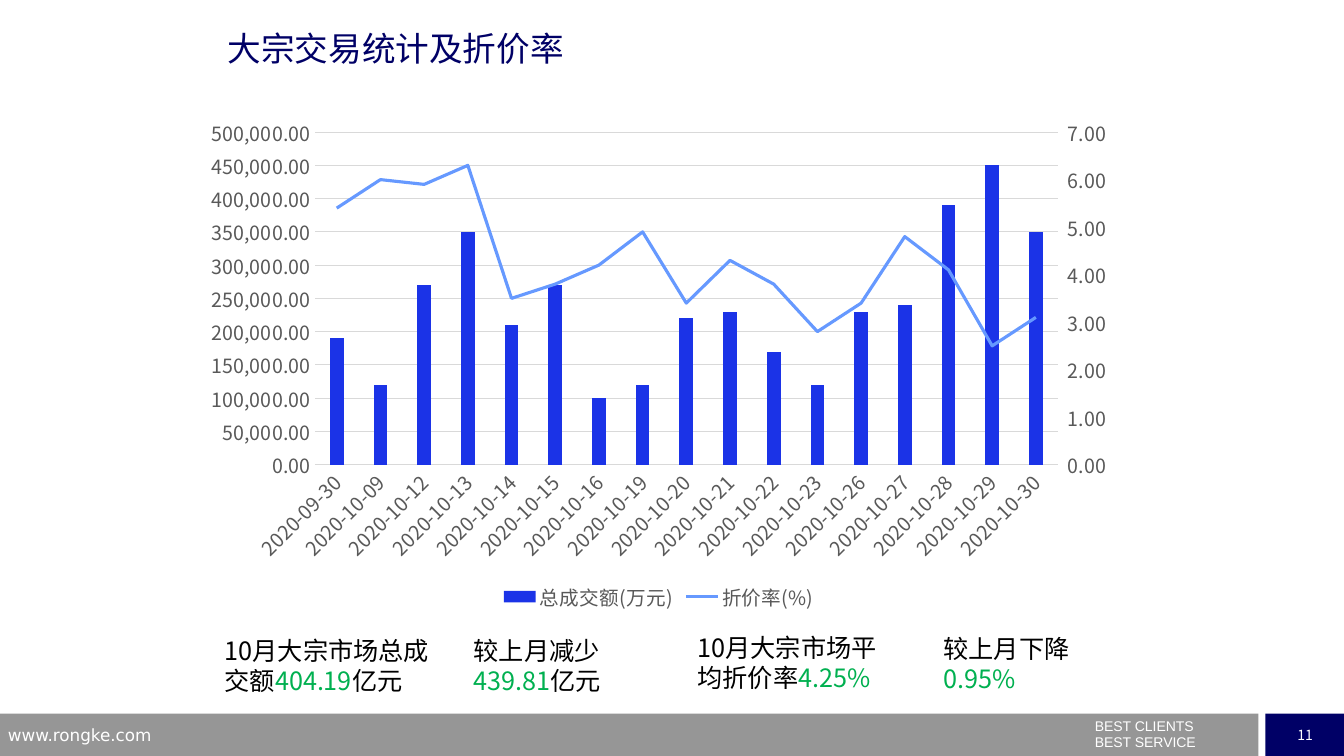
import copy

import pptx
import pptx.chart.axis
import pptx.chart.data
import pptx.dml.color
import pptx.enum.chart
import pptx.enum.shapes
import pptx.enum.text
import pptx.oxml
import pptx.oxml.ns
import pptx.util
from pptx.util import Inches, Pt

CJK = "Noto Sans CJK SC"
NAVY, WHITE, BLACK, GREEN = "000066", "FFFFFF", "000000", "00B050"
GREY_TEXT, GRID = "595959", "D9D9D9"
qn = pptx.oxml.ns.qn


def paint(target, color, size=None, face=CJK):
    """Colour a fill, a line or a font; a font also takes size and face."""
    rgb = pptx.dml.color.RGBColor.from_string(color)
    if size is None:
        if hasattr(target, "solid"):
            target.solid()
            target.fore_color.rgb = rgb
        else:
            target.color.rgb = rgb
    else:
        target.size, target.name = Pt(size), face
        target.color.rgb = rgb


def write(frame, paragraphs, size, face=CJK):
    """Fill a text frame with paragraphs given as lists of (text, colour) runs."""
    frame.word_wrap = True
    for index, runs in enumerate(paragraphs):
        paragraph = frame.add_paragraph() if index else frame.paragraphs[0]
        for text, color in runs:
            run = paragraph.add_run()
            run.text = text
            paint(run.font, color, size, face)


deck = pptx.Presentation()
deck.slide_width, deck.slide_height = Inches(13.33), Inches(7.5)
slide = deck.slides.add_slide(deck.slide_layouts[6])
shapes = slide.shapes

# Footer
bars = []
for left, width, color in [(0, 12.48, "969696"), (12.55, 0.79, NAVY)]:
    bar = shapes.add_shape(pptx.enum.shapes.MSO_SHAPE.RECTANGLE,
                           Inches(left), Inches(7.08), Inches(width), Inches(0.42))
    bar.shadow.inherit = False
    paint(bar.fill, color)
    bar.line.fill.background()
    bars.append(bar)
page_number = bars[1].text_frame
write(page_number, [[("11", WHITE)]], 10)
page_number.word_wrap = False
page_number.vertical_anchor = pptx.enum.text.MSO_ANCHOR.MIDDLE
page_number.paragraphs[0].alignment = pptx.enum.text.PP_ALIGN.CENTER

# Text boxes
texts = [
    (10.76, 7.14, 2.56, 0.36, 10, "Arial", [[("BEST CLIENTS", WHITE)], [("BEST SERVICE", WHITE)]]),
    (-0.02, 7.14, 3.22, 0.26, 12, "DejaVu Sans", [[("www.rongke.com", WHITE)]]),
    (2.16, 0.23, 9, 1.25, 24, CJK, [[("大宗交易统计及折价率", NAVY)]]),
    (2.13, 6.25, 2.38, 0.71, 18, CJK,
     [[("10月大宗市场总成交额", BLACK), ("404.19", GREEN), ("亿元", BLACK)]]),
    (4.6, 6.25, 1.92, 0.71, 18, CJK,
     [[("较上月减少", BLACK)], [("439.81", GREEN), ("亿元", BLACK)]]),
    (6.82, 6.22, 2.17, 0.71, 18, CJK,
     [[("10月大宗市场平均折价率", BLACK), ("4.25%", GREEN)]]),
    (9.26, 6.23, 1.65, 0.71, 18, CJK, [[("较上月下降", BLACK), ("0.95%", GREEN)]]),
]
frames = []
for left, top, width, height, size, face, paragraphs in texts:
    box = shapes.add_textbox(Inches(left), Inches(top), Inches(width), Inches(height))
    write(box.text_frame, paragraphs, size, face)
    frames.append(box.text_frame)
slogan = frames[0].paragraphs
for line in slogan:
    line.line_spacing = 0.5
slogan[1].space_before = Pt(5.7)

# Chart: turnover as columns, discount rate as a line on the right axis
days = ["09-30", "10-09", "10-12", "10-13", "10-14", "10-15", "10-16", "10-19", "10-20",
        "10-21", "10-22", "10-23", "10-26", "10-27", "10-28", "10-29", "10-30"]
turnover = [190000, 120000, 270000, 350000, 210000, 270000, 100000, 120000, 220000,
            230000, 170000, 120000, 230000, 240000, 390000, 450000, 350000]
discount = [5.4, 6, 5.9, 6.3, 3.5, 3.8, 4.2, 4.9, 3.4, 4.3, 3.8, 2.8, 3.4, 4.8, 4.1, 2.5, 3.1]
data = pptx.chart.data.CategoryChartData(number_format="#,##0.00")
data.categories = [f"2020-{day}" for day in days]
data.add_series("总成交额(万元)", turnover)
data.add_series("折价率(%)", discount)
chart = shapes.add_chart(pptx.enum.chart.XL_CHART_TYPE.COLUMN_CLUSTERED, Inches(1.91),
                         Inches(1.07), Inches(9.25), Inches(5.03), data).chart
paint(chart.font, BLACK, 10)
chart.has_title = False
chart.has_legend = True
chart.legend.position = pptx.enum.chart.XL_LEGEND_POSITION.BOTTOM
chart.legend.include_in_layout = False
paint(chart.legend.font, GREY_TEXT, 14)

columns = chart.plots[0]
columns.gap_width, columns.overlap, columns.vary_by_categories = 219, -27, False
paint(columns.series[0].format.fill, "1B33E7")

dates, amounts = chart.category_axis, chart.value_axis
for axis in (dates, amounts):
    axis.major_tick_mark = pptx.enum.chart.XL_TICK_MARK.NONE
    paint(axis.tick_labels.font, GREY_TEXT, 14)
paint(dates.format.line, GRID)
dates.format.line.width = Pt(0.75)
next(dates._element.iter(qn("a:bodyPr"))).set("rot", "-2700000")
amounts.minimum_scale, amounts.maximum_scale, amounts.major_unit = 0, 500000, 50000
amounts.tick_labels.number_format = "#,##0.00"
amounts.tick_labels.number_format_is_linked = False
amounts.format.line.fill.background()
amounts.has_major_gridlines = True
paint(amounts.major_gridlines.format.line, GRID)
amounts.major_gridlines.format.line.width = Pt(0.75)

right_values = copy.deepcopy(amounts._element)
right_dates = copy.deepcopy(dates._element)
for element, own_id, cross_id in [(right_values, "5002", "5001"), (right_dates, "5001", "5002")]:
    element.find(qn("c:axId")).set("val", own_id)
    element.find(qn("c:crossAx")).set("val", cross_id)
right_values.find(qn("c:axPos")).set("val", "r")
right_values.find(qn("c:crosses")).set("val", "max")
amounts._element.addnext(right_values)
right_values.addnext(right_dates)
pptx.chart.axis.CategoryAxis(right_dates).visible = False
rates = pptx.chart.axis.ValueAxis(right_values)
rates.maximum_scale, rates.major_unit = 7, 1
rates.has_major_gridlines = False
rates.major_tick_mark = pptx.enum.chart.XL_TICK_MARK.OUTSIDE

line_chart = pptx.oxml.parse_xml(
    '<c:lineChart xmlns:c="http://schemas.openxmlformats.org/drawingml/2006/chart">'
    '<c:grouping val="standard"/><c:varyColors val="0"/><c:marker val="1"/>'
    '<c:axId val="5001"/><c:axId val="5002"/></c:lineChart>')
discount_series = columns.series[1]._element
for flag in discount_series.findall(qn("c:invertIfNegative")):
    discount_series.remove(flag)
line_chart.insert(2, discount_series)
columns._element.addnext(line_chart)
discount_line = chart.plots[1].series[0]
discount_line.smooth = False
discount_line.marker.style = pptx.enum.chart.XL_MARKER_STYLE.NONE
paint(discount_line.format.line, "6699FF")
discount_line.format.line.width = Pt(2.25)

# East Asian glyphs take the same face as Latin ones
for root in (shapes.element, chart.element):
    for latin in list(root.iter(qn("a:latin"))):
        east_asian = latin.makeelement(qn("a:ea"), {"typeface": latin.get("typeface")})
        latin.addnext(east_asian)

deck.save("out.pptx")
